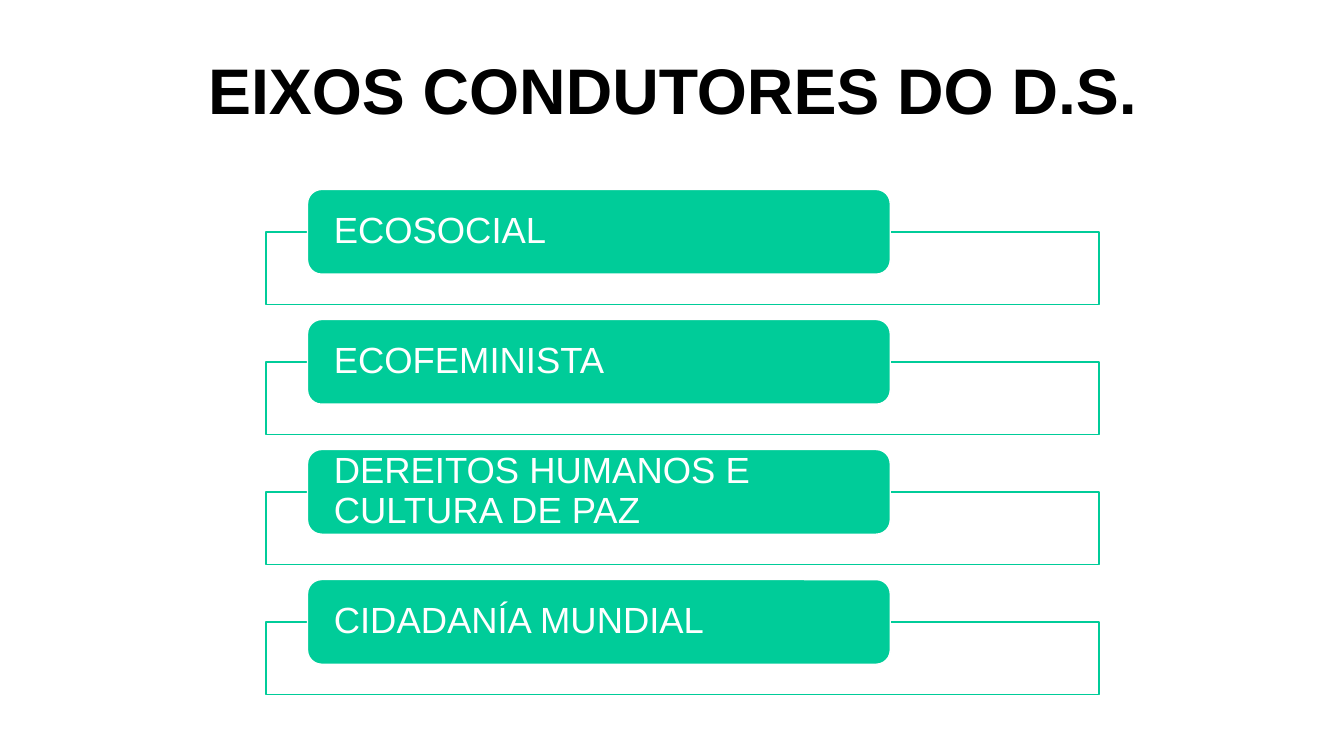
"""Build the slide listing the four guiding axes of sustainable development."""
import lxml.etree
import pptx
import pptx.dml.color
import pptx.enum.shapes
import pptx.enum.text
import pptx.oxml.ns
import pptx.util

SLIDE_WIDTH, SLIDE_HEIGHT = 13.33, 7.5
FONT = "Arial"
GREEN, WHITE, BLACK = "00CC99", "FFFFFF", "000000"
AXES = [
    "ECOSOCIAL",
    "ECOFEMINISTA",
    "DEREITOS HUMANOS E CULTURA DE PAZ",
    "CIDADANÍA MUNDIAL",
]
FIRST_ROW, ROW_STEP = 1.88, 1.29
FRAME_LEFT, FRAME_WIDTH, FRAME_HEIGHT = 2.64, 8.26, 0.72
LABEL_LEFT, LABEL_WIDTH, LABEL_HEIGHT = 3.05, 5.78, 0.84


def color(hex_string):
    """Return the colour for a hex string."""
    return pptx.dml.color.RGBColor.from_string(hex_string)


def box(left, top, width, height):
    """Return a position and size given in inches as lengths."""
    return [pptx.util.Inches(value) for value in (left, top, width, height)]


def write_text(shape, text, size, text_color, alignment, spacing, inset=0, bold=False):
    """Write one vertically centred paragraph into a shape."""
    frame = shape.text_frame
    frame.text = text
    frame.word_wrap = True
    frame.vertical_anchor = pptx.enum.text.MSO_ANCHOR.MIDDLE
    frame.margin_left = frame.margin_right = pptx.util.Inches(inset)
    frame.margin_top = frame.margin_bottom = 0
    paragraph = frame.paragraphs[0]
    paragraph.alignment = alignment
    paragraph.line_spacing = spacing
    font = paragraph.runs[0].font
    font.name, font.size, font.bold = FONT, pptx.util.Pt(size), bold
    font.color.rgb = color(text_color)


def add_panel(slide, kind, place, fill, line):
    """Add a filled, outlined preset shape without a shadow."""
    shape = slide.shapes.add_shape(kind, *place)
    shape.shadow.inherit = False
    shape.fill.solid()
    shape.fill.fore_color.rgb = color(fill)
    shape.line.color.rgb = color(line)
    shape.line.width = pptx.util.Pt(1)
    return shape


def set_opacity(shape, percent):
    """Set the opacity of a shape's solid fill."""
    qn = pptx.oxml.ns.qn
    fill_color = shape.fill._xPr.find(qn("a:solidFill")).find(qn("a:srgbClr"))
    lxml.etree.SubElement(fill_color, qn("a:alpha"), val=str(percent * 1000))


def add_title(slide, text):
    """Add the centred slide title."""
    title = slide.shapes.add_textbox(*box(0.67, 0.3, 12, 1.25))
    write_text(title, text, 46, BLACK, pptx.enum.text.PP_ALIGN.CENTER, 0.93, bold=True)


def add_axis(slide, row, text):
    """Add one axis: an outlined frame with a rounded label over its top edge."""
    kinds = pptx.enum.shapes.MSO_SHAPE
    top = FIRST_ROW + row * ROW_STEP
    frame_place = box(FRAME_LEFT, top + LABEL_HEIGHT / 2, FRAME_WIDTH, FRAME_HEIGHT)
    frame = add_panel(slide, kinds.RECTANGLE, frame_place, WHITE, GREEN)
    set_opacity(frame, 90)
    label_place = box(LABEL_LEFT, top, LABEL_WIDTH, LABEL_HEIGHT)
    label = add_panel(slide, kinds.ROUNDED_RECTANGLE, label_place, GREEN, WHITE)
    write_text(label, text, 26, WHITE, pptx.enum.text.PP_ALIGN.LEFT, 0.9, inset=0.22)


def main():
    """Build and save the presentation."""
    presentation = pptx.Presentation()
    presentation.slide_width = pptx.util.Inches(SLIDE_WIDTH)
    presentation.slide_height = pptx.util.Inches(SLIDE_HEIGHT)
    slide = presentation.slides.add_slide(presentation.slide_layouts[6])
    add_title(slide, "EIXOS CONDUTORES DO D.S.")
    for row, text in enumerate(AXES):
        add_axis(slide, row, text)
    presentation.save("out.pptx")


if __name__ == "__main__":
    main()
